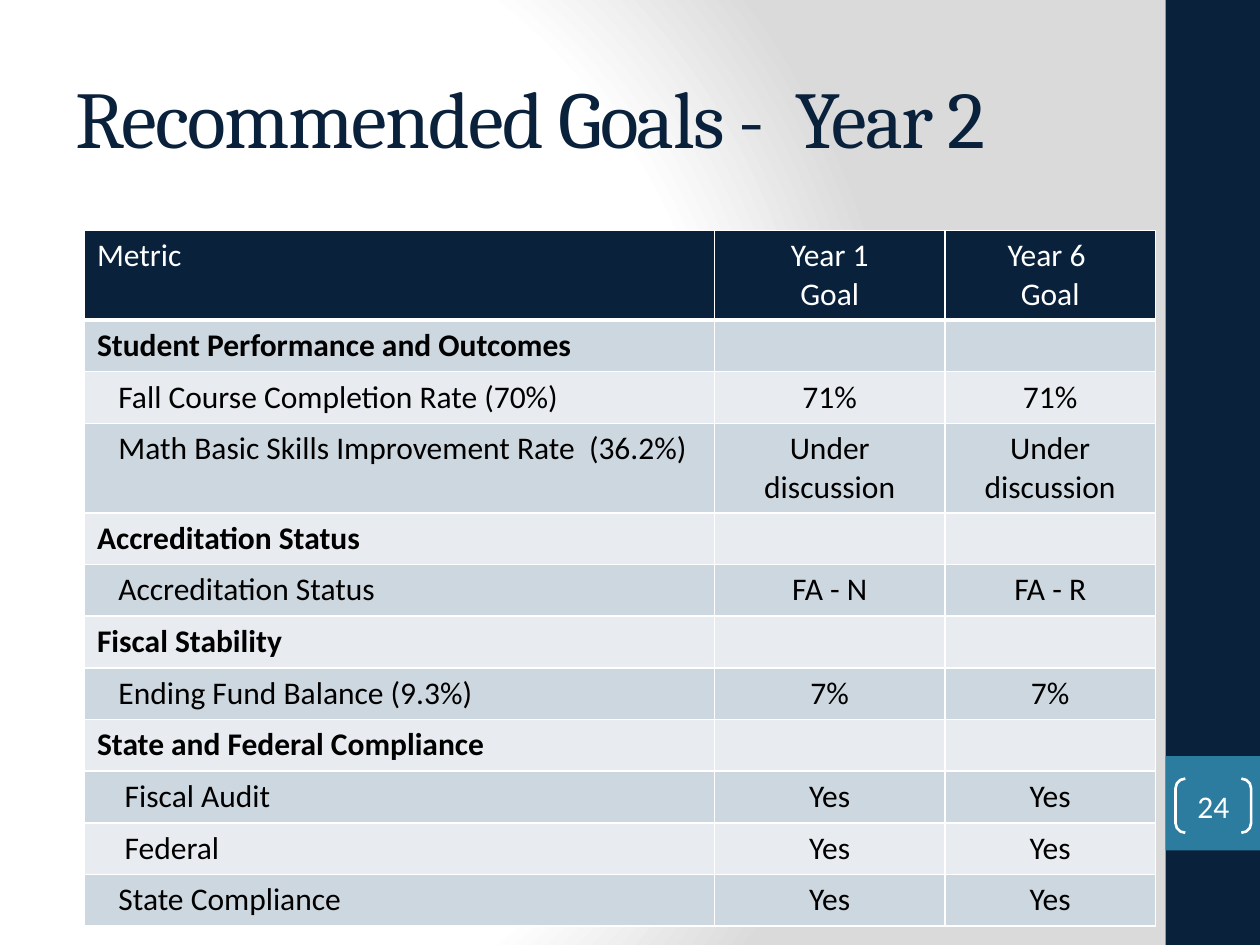
from pptx import Presentation, oxml
from pptx import util as u
from pptx.dml.color import RGBColor
from pptx.enum import shapes, text
from pptx.oxml.ns import nsdecls

NAVY, TEAL, WHITE, BLACK = "09213B", "2C7C9F", "FFFFFF", "000000"
BANDS = ["E8ECF0", "CDD7DF"]


def paint(fill, color):
    fill.solid()
    fill.fore_color.rgb = RGBColor.from_string(color)


def style(para, size, color, font="Calibri", bold=False, align=text.PP_ALIGN.CENTER):
    para.alignment = align
    for span in para.runs:
        span.font.size = u.Pt(size)
        span.font.name = font
        span.font.bold = bold
        span.font.color.rgb = RGBColor.from_string(color)


deck = Presentation()
deck.slide_width, deck.slide_height = u.Inches(10), u.Inches(7.5)
page = deck.slides.add_slide(deck.slide_layouts[5])

paint(page.background.fill, WHITE)
backdrop = page.element.cSld.bg.bgPr
stops = "".join(
    f'<a:gs pos="{place * 1000}"><a:srgbClr val="{color}"/></a:gs>'
    for place, color in [(0, WHITE), (75, WHITE), (100, "DADADA")]
)
backdrop.replace(backdrop[0], oxml.parse_xml(
    f'<a:gradFill {nsdecls("a")} rotWithShape="1"><a:gsLst>{stops}</a:gsLst>'
    '<a:path path="circle"><a:fillToRect l="20000" t="50000" r="100000" b="50000"/>'
    '</a:path></a:gradFill>'
))

for top, height, color in [(0, 7.5, NAVY), (6, 0.75, TEAL)]:
    band = page.shapes.add_shape(
        shapes.MSO_SHAPE.RECTANGLE,
        u.Inches(9.25), u.Inches(top), u.Inches(0.75), u.Inches(height))
    band.shadow.inherit = False
    band.line.fill.background()
    paint(band.fill, color)

title = page.shapes.title
title.left, title.top = u.Inches(0.5), u.Inches(0.3)
title.width, title.height = u.Inches(8.33), u.Inches(1.25)
frame = title.text_frame
frame.text = "Recommended Goals -  Year 2"
frame.vertical_anchor = text.MSO_ANCHOR.MIDDLE
style(frame.paragraphs[0], 46, NAVY, "Cambria", align=text.PP_ALIGN.LEFT)
frame.paragraphs[0].runs[0].font._element.set("spc", "-100")

number = page.shapes.add_shape(
    shapes.MSO_SHAPE.DOUBLE_BRACKET,
    u.Inches(9.33), u.Inches(6.18), u.Inches(0.6), u.Inches(0.43))
number.adjustments[0] = 0.18
number.shadow.inherit = False
number.fill.background()
paint(number.line.fill, WHITE)
number.line.width = u.Pt(1.5)
frame = number.text_frame
frame.margin_left = frame.margin_right = frame.margin_top = frame.margin_bottom = 0
frame.vertical_anchor = text.MSO_ANCHOR.MIDDLE
frame.text = "24"
style(frame.paragraphs[0], 18, WHITE)

rows = [
    (0, "Metric", "Year 1\nGoal", "Year 6 \nGoal"),
    (0, "Student Performance and Outcomes", "", ""),
    (0.17, "Fall Course Completion Rate (70%)", "71%", "71%"),
    (0.17, "Math Basic Skills Improvement Rate  (36.2%)", "Under discussion", "Under discussion"),
    (0, "Accreditation Status", "", ""),
    (0.17, "Accreditation Status", "FA - N", "FA - R"),
    (0, "Fiscal Stability", "", ""),
    (0.17, "Ending Fund Balance (9.3%)", "7%", "7%"),
    (0, "State and Federal Compliance", "", ""),
    (0.22, "Fiscal Audit", "Yes", "Yes"),
    (0.22, "Federal", "Yes", "Yes"),
    (0.17, "State Compliance", "Yes", "Yes"),
]
widths = [5, 1.83, 1.67]
goals = page.shapes.add_table(
    len(rows), len(widths), u.Inches(0.67), u.Inches(1.83),
    u.Inches(8.5), u.Inches(0.41 * len(rows))).table
for column, width in zip(goals.columns, widths):
    column.width = u.Inches(width)

for r, (indent, *values) in enumerate(rows):
    header = r == 0
    section = not header and indent == 0
    for c, value in enumerate(values):
        cell = goals.cell(r, c)
        cell.text_frame.text = value
        align = text.PP_ALIGN.CENTER if c else text.PP_ALIGN.LEFT
        for para in cell.text_frame.paragraphs:
            style(para, 18, WHITE if header else BLACK, bold=section, align=align)
        if c == 0:
            cell.margin_left = u.Inches(0.1 + indent)
        paint(cell.fill, NAVY if header else BANDS[r % 2])
        properties = cell._tc.get_or_add_tcPr()
        for place, side in enumerate("LRTB"):
            weight = u.Pt(3 if header and side == "B" else 1)
            properties.insert(place, oxml.parse_xml(
                f'<a:ln{side} {nsdecls("a")} w="{weight}"><a:solidFill>'
                f'<a:srgbClr val="{WHITE}"/></a:solidFill></a:ln{side}>'))

deck.save("out.pptx")
